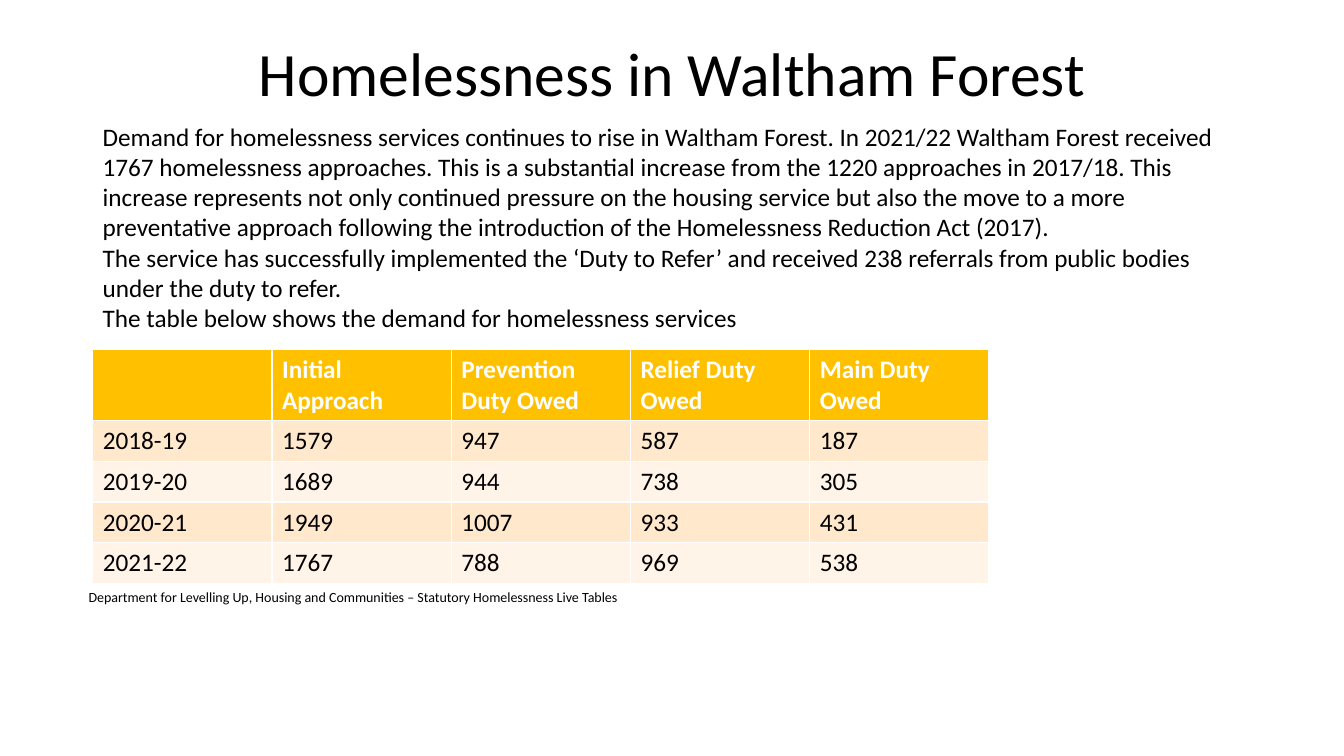
from pptx import Presentation
from pptx.dml.color import RGBColor as RGB
from pptx.enum.text import MSO_ANCHOR as Anchor, PP_ALIGN as Align
from pptx.util import Inches, Pt

FONT = "Calibri"
COLORS = {"black": "000000", "white": "FFFFFF", "gold": "FFC000",
          "peach": "FFE8CC", "cream": "FFF4E7"}


def style(para, size, color="black", bold=False):
    font = para.font
    font.name, font.size, font.bold = FONT, Pt(size), bold
    font.color.rgb = RGB.from_string(COLORS[color])


def add_text(left, top, width, height, lines, size):
    box = slide.shapes.add_textbox(
        Inches(left), Inches(top), Inches(width), Inches(height))
    frame = box.text_frame
    frame.word_wrap = True
    frame.text = "\n".join(lines)
    for para in frame.paragraphs:
        style(para, size)
    return frame


deck = Presentation()
deck.slide_width, deck.slide_height = Inches(13.33), Inches(7.5)
slide = deck.slides.add_slide(deck.slide_layouts[6])

# Title
title = add_text(0.92, 0.3, 11.5, 0.92, ["Homelessness in Waltham Forest"], 44)
title.vertical_anchor = Anchor.MIDDLE
title.paragraphs[0].alignment = Align.CENTER
title.paragraphs[0].line_spacing = 0.9

# Body text
add_text(0.92, 1.15, 11.61, 2.22, [
    "Demand for homelessness services continues to rise in Waltham Forest. "
    "In 2021/22 Waltham Forest received 1767 homelessness approaches. "
    "This is a substantial increase from the 1220 approaches in 2017/18. "
    "This increase represents not only continued pressure on the housing "
    "service but also the move to a more preventative approach following "
    "the introduction of the Homelessness Reduction Act (2017).",
    "The service has successfully implemented the ‘Duty to Refer’ and "
    "received 238 referrals from public bodies under the duty to refer.",
    "The table below shows the demand for homelessness services",
], 18)

# Source note
add_text(0.78, 5.79, 6.62, 0.27, [
    "Department for Levelling Up, Housing and Communities – "
    "Statutory Homelessness Live Tables"], 10)

# Demand table: white rules come from the default table style
rows = [
    ["", "Initial Approach", "Prevention Duty Owed", "Relief Duty Owed",
     "Main Duty Owed"],
    ["2018-19", "1579", "947", "587", "187"],
    ["2019-20", "1689", "944", "738", "305"],
    ["2020-21", "1949", "1007", "933", "431"],
    ["2021-22", "1767", "788", "969", "538"],
]
table = slide.shapes.add_table(
    len(rows), len(rows[0]), Inches(0.92), Inches(3.47),
    Inches(8.89), Inches(2.32)).table
for r, row in enumerate(rows):
    head = r == 0
    table.rows[r].height = Inches(0.7 if head else 0.405)
    shade = "gold" if head else ("cream", "peach")[r % 2]
    for c, text in enumerate(row):
        cell = table.cell(r, c)
        cell.text = text
        cell.fill.solid()
        cell.fill.fore_color.rgb = RGB.from_string(COLORS[shade])
        style(cell.text_frame.paragraphs[0], 18,
              "white" if head else "black", head)

deck.save("out.pptx")
